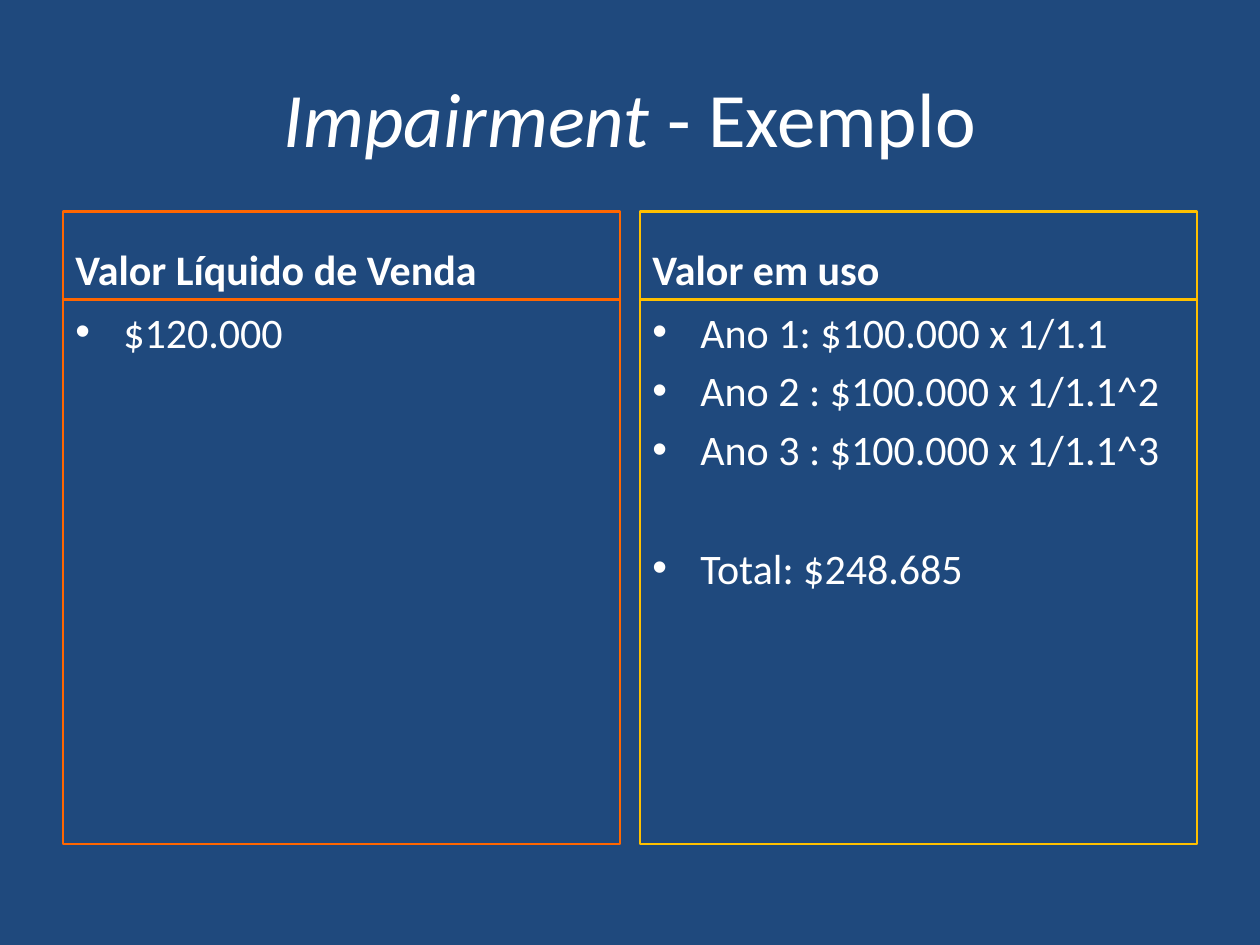
from dataclasses import dataclass

from lxml.etree import SubElement
from pptx import Presentation
from pptx.dml.color import RGBColor
from pptx.enum.shapes import MSO_SHAPE
from pptx.enum.text import MSO_ANCHOR, PP_ALIGN
from pptx.oxml.ns import qn
from pptx.util import Inches, Pt


@dataclass(frozen=True)
class Theme:
    font: str = "Calibri"
    background: RGBColor = RGBColor(0x1F, 0x49, 0x7D)
    text: RGBColor = RGBColor(0xFF, 0xFF, 0xFF)
    sale: RGBColor = RGBColor(0xFF, 0x66, 0x00)
    use: RGBColor = RGBColor(0xFF, 0xC0, 0x00)
    title_size: int = 44
    body_size: int = 24
    border: float = 1.5
    item_gap: float = 4.8
    total_gap: float = 39


class ComparisonSlide:
    def __init__(self, deck, theme):
        self.theme = theme
        self.slide = deck.slides.add_slide(deck.slide_layouts[5])
        self.slide.background.fill.solid()
        self.slide.background.fill.fore_color.rgb = theme.background

    def add_run(self, paragraph, text, size, bold=False, italic=False):
        run = paragraph.add_run()
        run.text = text
        run.font.name = self.theme.font
        run.font.size = Pt(size)
        run.font.bold = bold
        run.font.italic = italic
        run.font.color.rgb = self.theme.text

    def add_title(self, term, rest):
        title = self.slide.shapes.title
        title.left, title.top = Inches(0.5), Inches(0.3)
        title.width, title.height = Inches(9), Inches(1.25)
        title.text_frame.vertical_anchor = MSO_ANCHOR.MIDDLE
        heading = title.text_frame.paragraphs[0]
        heading.alignment = PP_ALIGN.CENTER
        self.add_run(heading, term, self.theme.title_size, italic=True)
        self.add_run(heading, rest, self.theme.title_size)

    def add_frame(self, left, top, height, color, anchor):
        frame = self.slide.shapes.add_shape(
            MSO_SHAPE.RECTANGLE, Inches(left), Inches(top), Inches(4.42), Inches(height)
        )
        frame.shadow.inherit = False
        frame.fill.background()
        frame.line.color.rgb = color
        frame.line.width = Pt(self.theme.border)
        frame.text_frame.word_wrap = True
        frame.text_frame.vertical_anchor = anchor
        return frame.text_frame

    def add_bullet(self, paragraph):
        properties = paragraph._p.get_or_add_pPr()
        properties.set("marL", str(Inches(0.38)))
        properties.set("indent", str(-Inches(0.38)))
        SubElement(properties, qn("a:buFont"), typeface="Arial")
        SubElement(properties, qn("a:buChar"), char="•")

    def add_column(self, left, color, heading, items):
        header = self.add_frame(left, 1.68, 0.7, color, MSO_ANCHOR.BOTTOM).paragraphs[0]
        header.alignment = PP_ALIGN.LEFT
        self.add_run(header, heading, self.theme.body_size, bold=True)

        body = self.add_frame(left, 2.38, 4.32, color, MSO_ANCHOR.TOP)
        for index, (item, gap) in enumerate(items):
            paragraph = body.add_paragraph() if index else body.paragraphs[0]
            paragraph.alignment = PP_ALIGN.LEFT
            paragraph.space_before = Pt(gap)
            self.add_bullet(paragraph)
            self.add_run(paragraph, item, self.theme.body_size)


def main():
    deck = Presentation()
    deck.slide_width, deck.slide_height = Inches(10), Inches(7.5)
    theme = Theme()
    impairment = ComparisonSlide(deck, theme)
    impairment.add_title("Impairment", " - Exemplo")
    impairment.add_column(0.5, theme.sale, "Valor Líquido de Venda", [("$120.000", 0)])
    impairment.add_column(5.08, theme.use, "Valor em uso", [
        ("Ano 1: $100.000 x 1/1.1", 0),
        ("Ano 2 : $100.000 x 1/1.1^2", theme.item_gap),
        ("Ano 3 : $100.000 x 1/1.1^3", theme.item_gap),
        ("Total: $248.685", theme.total_gap),
    ])
    deck.save("out.pptx")


if __name__ == "__main__":
    main()
